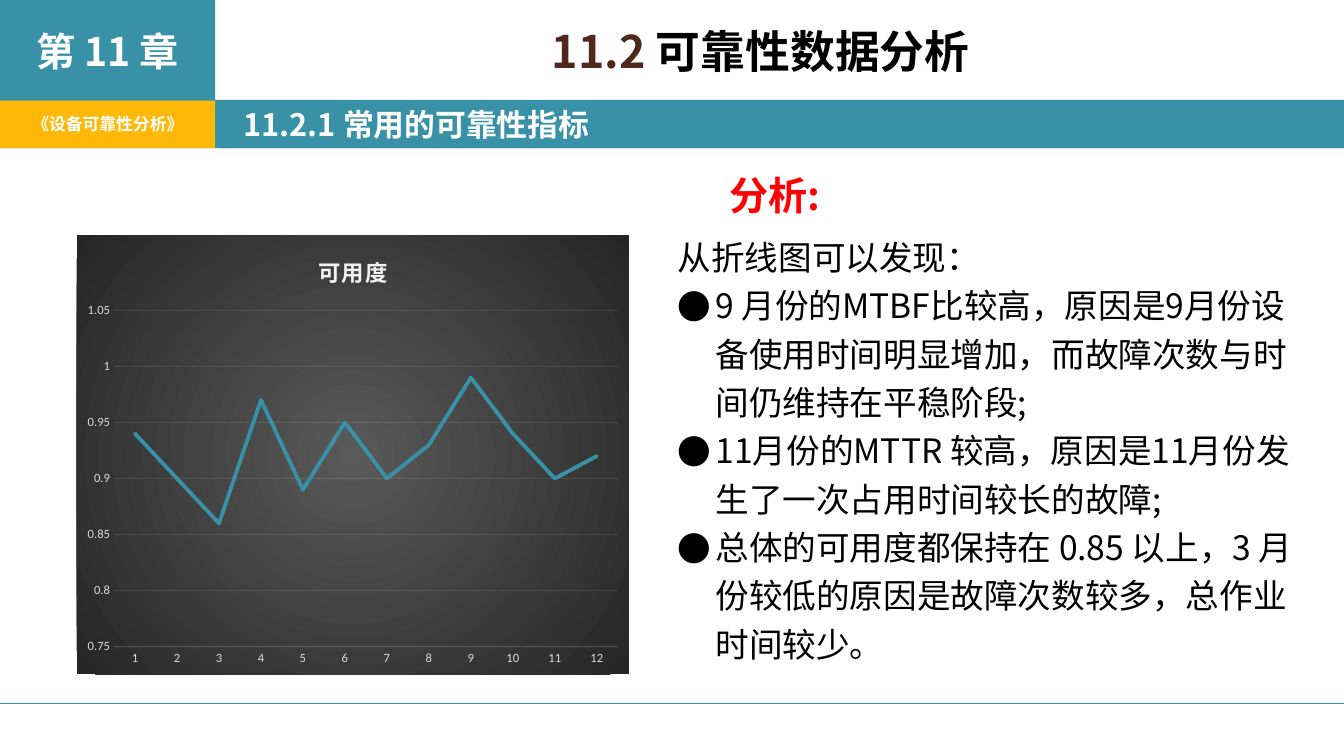
from dataclasses import dataclass

from lxml import etree
from pptx import Presentation
from pptx import util as u
from pptx.chart import data as cdata
from pptx.dml import color as dml
from pptx.enum import chart as ce
from pptx.enum import shapes, text
from pptx.oxml import parse_xml
from pptx.oxml.ns import qn

PX = 9525  # EMU in one px, 96 px to the inch
HUE = {
    "teal": "3891A7", "gold": "FEB80A", "white": "FFFFFF", "black": "000000",
    "brown": "4F271C", "red": "FF0000", "pale": "F2F2F2", "grey": "D9D9D9",
    "mid": "595959", "dark": "262626",
}
SANS = "Noto Sans CJK SC"
LEFT, MID = text.PP_ALIGN.LEFT, text.PP_ALIGN.CENTER
RATES = [0.94, 0.9, 0.86, 0.97, 0.89, 0.95, 0.9, 0.93, 0.99, 0.94, 0.9, 0.92]
HINT = 36  # hanging indent of the bullets, px


@dataclass
class Box:
    x: int
    y: int
    w: int
    h: int

    def emu(self) -> list[int]:
        return [v * PX for v in (self.x, self.y, self.w, self.h)]


@dataclass
class Panel:
    box: Box
    fill: str
    words: str = ""
    size: int = 12
    align: text.PP_ALIGN = MID
    inset: int = 10


@dataclass
class Point:
    words: str
    mark: bool = True


PANELS = [
    Panel(Box(0, 95, 1280, 46), "teal"),
    Panel(Box(0, 95, 205, 46), "gold", "《设备可靠性分析》"),
    Panel(Box(0, 0, 205, 96), "teal", "第 11 章", 28),
    Panel(Box(209, 96, 1071, 45), "teal", "11.2.1 常用的可靠性指标", 22, LEFT, 23),
]
POINTS = [
    Point("从折线图可以发现：", False),
    Point("9 月份的MTBF比较高，原因是9月份设备使用时间明显增加，"
          "而故障次数与时间仍维持在平稳阶段;"),
    Point("11月份的MTTR 较高，原因是11月份发生了一次占用时间较长的故障;"),
    Point("总体的可用度都保持在 0.85 以上，3 月份较低的原因是故障次数较多，"
          "总作业时间较少。"),
]


def rgb(name: str) -> dml.RGBColor:
    return dml.RGBColor.from_string(HUE[name])


def write(para, words: str, size: float, hue: str, bold: bool = False,
          face: str = SANS):
    run = para.add_run()
    run.text = words
    font = run.font
    font.size, font.bold, font.name = u.Pt(size), bold, face
    font.color.rgb = rgb(hue)
    # East Asian letters take their face from a:ea
    etree.SubElement(font._element, qn("a:ea"), typeface=SANS)
    return run


def panel(slide, item: Panel) -> None:
    shape = slide.shapes.add_shape(shapes.MSO_SHAPE.RECTANGLE, *item.box.emu())
    shape.shadow.inherit = False
    shape.fill.solid()
    shape.fill.fore_color.rgb = rgb(item.fill)
    shape.line.fill.background()
    if item.words:
        frame = shape.text_frame
        frame.vertical_anchor = text.MSO_ANCHOR.MIDDLE
        frame.margin_left = item.inset * PX
        para = frame.paragraphs[0]
        para.alignment = item.align
        write(para, item.words, item.size, "white", True)


def field(slide, box: Box, grow: bool = True):
    frame = slide.shapes.add_textbox(*box.emu()).text_frame
    frame.word_wrap = True
    if grow:
        frame.auto_size = text.MSO_AUTO_SIZE.SHAPE_TO_FIT_TEXT
    return frame


def bullet(para) -> None:
    props = para._p.get_or_add_pPr()
    props.set("marL", str(HINT * PX))
    props.set("indent", str(-HINT * PX))
    etree.SubElement(props, qn("a:buFont"), typeface=SANS)
    etree.SubElement(props, qn("a:buChar"), char="●")


def faint(line) -> None:
    line.width = u.Pt(0.75)
    line.color.rgb = rgb("pale")
    tint = line._ln.find(".//" + qn("a:srgbClr"))
    etree.SubElement(tint, qn("a:alpha"), val="10000")


def backdrop(chart) -> None:
    stops = "".join(
        f'<a:gs pos="{pos}"><a:srgbClr val="{HUE[hue]}"/></a:gs>'
        for pos, hue in ((0, "mid"), (100000, "dark")))
    props = parse_xml(
        '<c:spPr xmlns:c="http://schemas.openxmlformats.org/drawingml/2006/chart"'
        ' xmlns:a="http://schemas.openxmlformats.org/drawingml/2006/main">'
        f'<a:gradFill><a:gsLst>{stops}</a:gsLst><a:path path="circle">'
        '<a:fillToRect l="50000" t="50000" r="50000" b="50000"/></a:path>'
        '</a:gradFill><a:ln><a:noFill/></a:ln></c:spPr>')
    chart._chartSpace.find(qn("c:chart")).addnext(props)


def graph(slide, box: Box) -> None:
    data = cdata.CategoryChartData()
    data.categories = [str(n + 1) for n in range(len(RATES))]
    data.add_series("Series 1", RATES)
    chart = slide.shapes.add_chart(
        ce.XL_CHART_TYPE.LINE, *box.emu(), data).chart
    chart.font.size, chart.font.name = u.Pt(10), "Calibri"
    chart.has_legend = False
    chart.has_title = True
    title = chart.chart_title.text_frame.paragraphs[0]
    run = write(title, "可用度", 16, "pale", True, "Calibri")
    run.font._element.set("spc", "100")
    backdrop(chart)

    # Axes
    cat, val = chart.category_axis, chart.value_axis
    for axis in (cat, val):
        axis.major_tick_mark = axis.minor_tick_mark = ce.XL_TICK_MARK.NONE
        font = axis.tick_labels.font
        font.size, font.name = u.Pt(9), "Calibri"
        font.color.rgb = rgb("grey")
    faint(cat.format.line)
    val.format.line.fill.background()
    val.has_major_gridlines = True
    faint(val.major_gridlines.format.line)
    val.minimum_scale, val.maximum_scale, val.major_unit = 0.75, 1.05, 0.05

    # Line
    plot = chart.plots[0]
    plot.vary_by_categories = False
    rate = plot.series[0]
    rate.smooth = False
    rate.marker.style = ce.XL_MARKER_STYLE.NONE
    rate.format.line.width = u.Pt(2.75)
    rate.format.line.color.rgb = rgb("teal")
    rate.format.line._ln.set("cap", "rnd")


def main() -> None:
    deck = Presentation()
    deck.slide_width, deck.slide_height = 1280 * PX, 720 * PX
    slide = deck.slides.add_slide(deck.slide_layouts[6])

    # Header and footer rule
    for item in PANELS:
        panel(slide, item)
    rule = slide.shapes.add_connector(
        shapes.MSO_CONNECTOR.STRAIGHT, 0, 670 * PX, 1280 * PX, 670 * PX)
    rule.line.width = u.Pt(0.79)
    rule.line.color.rgb = rgb("teal")
    etree.SubElement(rule._element.spPr, qn("a:effectLst"))

    # Title
    head = field(slide, Box(222, 18, 1005, 77), False).paragraphs[0]
    head.alignment = MID
    write(head, "11.2 ", 32, "brown", True)
    write(head, "可靠性数据分析", 32, "black", True)

    graph(slide, Box(73, 224, 526, 418))

    # Findings
    frame = field(slide, Box(636, 213, 625, 428))
    for n, point in enumerate(POINTS):
        para = frame.add_paragraph() if n else frame.paragraphs[0]
        para.line_spacing = 1.2
        if point.mark:
            bullet(para)
        write(para, point.words, 24, "black")
    label = field(slide, Box(685, 158, 171, 55)).paragraphs[0]
    write(label, "分析:", 28, "red", True)

    deck.save("out.pptx")


if __name__ == "__main__":
    main()
